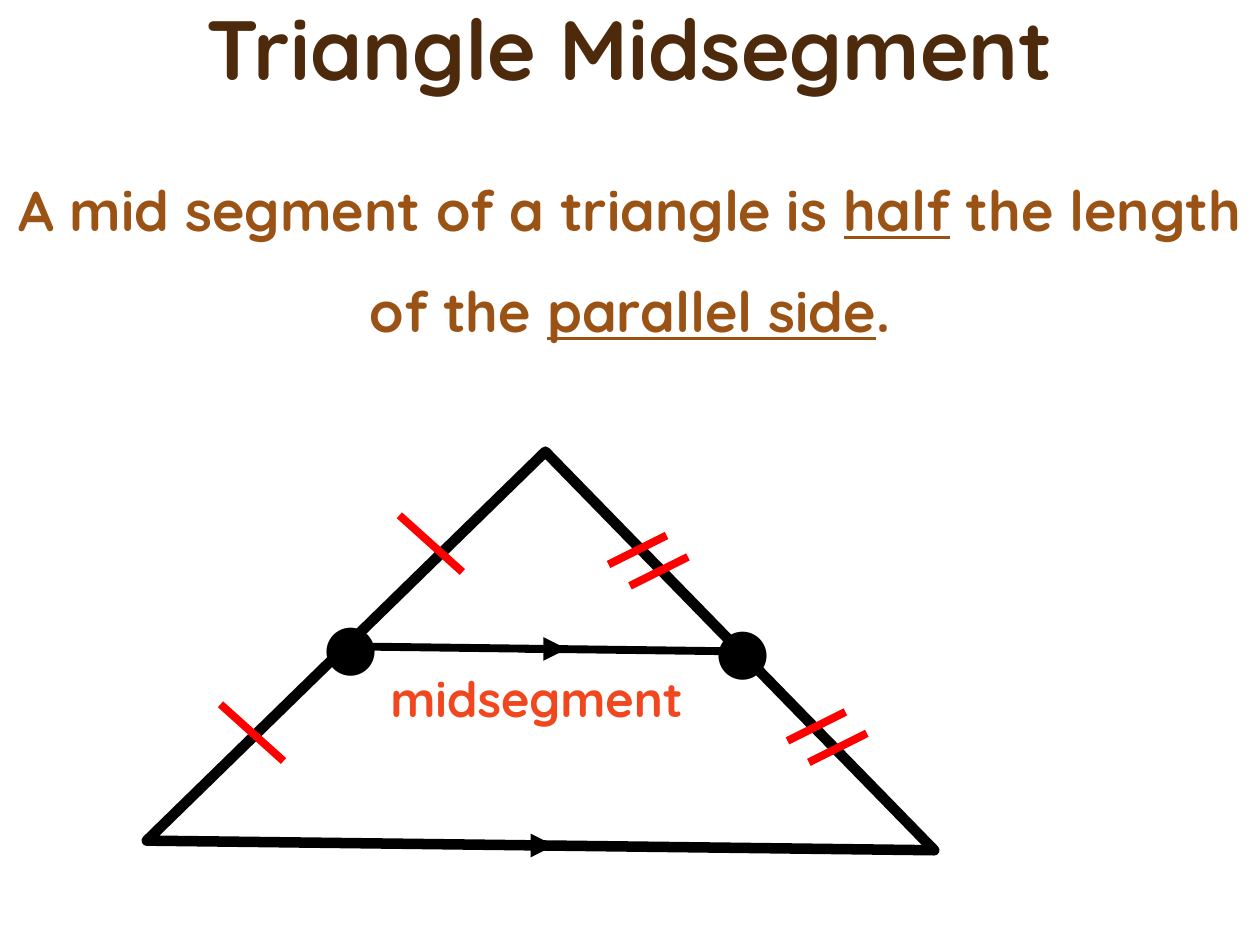
from lxml import etree
from pptx import Presentation
from pptx.dml.color import RGBColor
from pptx.enum.shapes import MSO_CONNECTOR, MSO_SHAPE
from pptx.enum.text import MSO_ANCHOR, PP_ALIGN
from pptx.oxml.ns import qn
from pptx.util import Inches, Pt

STRAIGHT = MSO_CONNECTOR.STRAIGHT
RIGHT_TRIANGLE = MSO_SHAPE.RIGHT_TRIANGLE
TOP, BOTTOM = MSO_ANCHOR.TOP, MSO_ANCHOR.BOTTOM
LEFT, CENTER = PP_ALIGN.LEFT, PP_ALIGN.CENTER

COLORS = {
    "title": "4D2A0B",
    "theorem": "9A5315",
    "label": "F1471F",
    "figure": "000000",
    "tick": "FF0000",
}


class Board:
    """Holds the style and the slide being drawn."""

    font = "Quicksand"
    stroke = 4.5

    def __init__(self, slide):
        self.slide = slide

    def color(self, name):
        return RGBColor.from_string(COLORS[name])

    def text(self, box, runs, size, color, bold=True, align=LEFT,
             anchor=TOP, spacing=1.0):
        """Add one paragraph; runs are (text, underlined) pairs."""
        s = self.slide.shapes.add_textbox(*map(Inches, box))
        tf = s.text_frame
        tf.word_wrap = True
        tf.vertical_anchor = anchor
        p = tf.paragraphs[0]
        p.alignment = align
        p.line_spacing = spacing
        for words, underlined in runs:
            r = p.add_run()
            r.text = words
            r.font.name = self.font
            r.font.size = Pt(size)
            r.font.bold = bold
            r.font.underline = underlined
            r.font.color.rgb = self.color(color)

    def triangle(self, left, top, side, angle, width):
        s = self.slide.shapes.add_shape(
            RIGHT_TRIANGLE, *map(Inches, (left, top, side, side)))
        s.rotation = angle
        s.shadow.inherit = False
        s.fill.background()
        s.line.color.rgb = self.color("figure")
        s.line.width = Pt(width)

    def line(self, start, end, color="figure", arrow=False):
        s = self.slide.shapes.add_connector(
            STRAIGHT, *map(Inches, (*start, *end)))
        s.line.color.rgb = self.color(color)
        s.line.width = Pt(self.stroke)
        sp_pr = s._element.spPr
        if arrow:
            etree.SubElement(sp_pr.find(qn("a:ln")), qn("a:tailEnd"),
                             type="triangle")
        etree.SubElement(sp_pr, qn("a:effectLst"))

    def tick(self, x, y, dx, dy):
        """Mark a side with a short stroke from (x, y)."""
        self.line((x, y), (x + dx, y + dy), "tick")

    def dot(self, left, top):
        self.text((left, top, 0.58, 0.71), [("●", False)], 36, "figure",
                  bold=False)


def main():
    prs = Presentation()
    prs.slide_width, prs.slide_height = Inches(10), Inches(7.5)
    board = Board(prs.slides.add_slide(prs.slide_layouts[6]))

    board.text((0, 0, 10, 0.83), [("Triangle Midsegment", False)], 48,
               "title", align=CENTER, anchor=BOTTOM, spacing=0.9)

    board.triangle(2.08, 4.5, 4.42, 135.7, 6)
    board.line((2.75, 5.13), (5.87, 5.17))

    for x, y in ((3.17, 4.09), (1.75, 5.59)):
        board.tick(x, y, 0.5, 0.45)
    for x, y in ((5.29, 4.25), (6.71, 5.65)):
        for offset in (0, 0.17):
            board.tick(x + offset, y + offset, -0.46, 0.23)

    theorem = [
        ("A mid segment of a triangle is ", False),
        ("half", True),
        (" the length of the ", False),
        ("parallel side", True),
        (".", False),
    ]
    board.text((0, 1.08, 10, 1.61), theorem, 32, "theorem",
               align=CENTER, spacing=1.5)
    board.text((3, 5.26, 3.42, 0.57), [("midsegment", False)], 28, "label")

    for x, y in ((4.17, 5.15), (4.07, 6.71)):
        board.line((x, y), (x + 0.33, y), arrow=True)
    for left, top in ((2.47, 4.76), (5.58, 4.79)):
        board.dot(left, top)

    prs.save("out.pptx")


if __name__ == "__main__":
    main()
